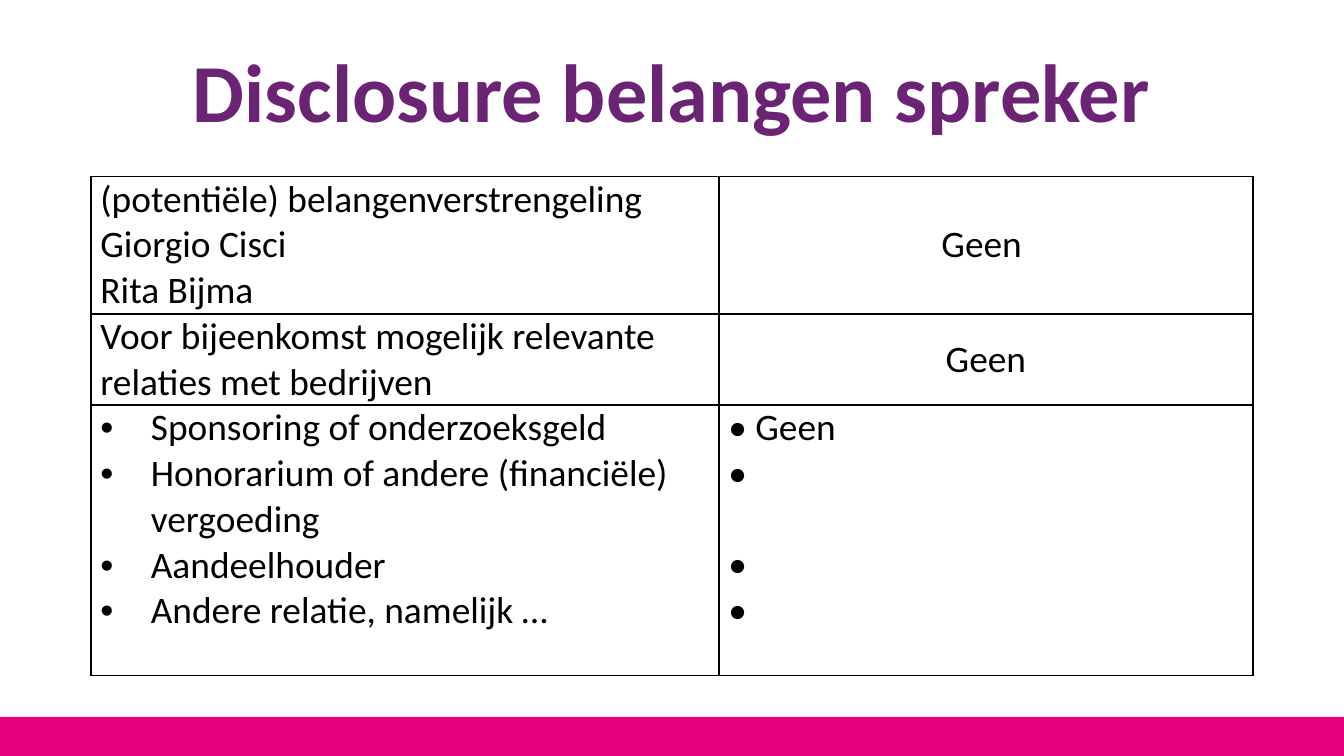
from dataclasses import dataclass

from pptx import Presentation
from pptx.dml.color import RGBColor
from pptx.enum import shapes, text
from pptx.oxml import parse_xml
from pptx.oxml.ns import nsdecls
from pptx import util as u


@dataclass(frozen=True)
class Theme:
    font: str = "Calibri"
    title_size: float = 44.1
    body_size: float = 20
    purple: str = "6B2473"
    pink: str = "E5007E"
    black: str = "000000"
    white: str = "FFFFFF"


class SlideBuilder:
    def __init__(self, deck, theme):
        self.theme = theme
        self.page = deck.slides.add_slide(deck.slide_layouts[6])
        fill = self.page.background.fill
        fill.solid()
        fill.fore_color.rgb = RGBColor.from_string(theme.white)

    def add_span(self, para, words, size, color, bold=False):
        span = para.add_run()
        span.text = words
        span.font.name = self.theme.font
        span.font.size = u.Pt(size)
        span.font.bold = bold
        span.font.color.rgb = RGBColor.from_string(color)

    def bar(self, left, top, width, height, color):
        shape = self.page.shapes.add_shape(
            shapes.MSO_SHAPE.RECTANGLE, u.Pt(left), u.Pt(top), u.Pt(width), u.Pt(height))
        shape.shadow.inherit = False
        shape.fill.solid()
        shape.fill.fore_color.rgb = RGBColor.from_string(color)
        shape.line.fill.background()

    def title(self, words, left, top, width, height):
        box = self.page.shapes.add_textbox(
            u.Pt(left), u.Pt(top), u.Pt(width), u.Pt(height))
        frame = box.text_frame
        frame.word_wrap = True
        frame.margin_top = u.Pt(5)
        para = frame.paragraphs[0]
        para.alignment = text.PP_ALIGN.CENTER
        self.add_span(para, words, self.theme.title_size, self.theme.purple, bold=True)

    def table(self, left, top, widths, heights):
        frame = self.page.shapes.add_table(
            len(heights), len(widths), u.Pt(left), u.Pt(top),
            u.Pt(sum(widths)), u.Pt(sum(heights)))
        table = frame.table
        table.first_row = table.horz_banding = False
        for column, width in zip(table.columns, widths):
            column.width = u.Pt(width)
        for row, height in zip(table.rows, heights):
            row.height = u.Pt(height)
        return table

    def border(self, cell):
        """Draw a 1 pt line on all four sides of a cell."""
        properties = cell._tc.get_or_add_tcPr()
        for side in "LRTB":
            properties.append(parse_xml(
                f'<a:ln{side} {nsdecls("a")} w="{u.Pt(1)}"><a:solidFill>'
                f'<a:srgbClr val="{self.theme.black}"/></a:solidFill></a:ln{side}>'))

    def bullet(self, para, indent):
        properties = para._p.get_or_add_pPr()
        properties.set("marL", str(u.Pt(indent)))
        properties.set("indent", str(-u.Pt(indent)))
        properties.append(parse_xml(f'<a:buFont {nsdecls("a")} typeface="Arial"/>'))
        properties.append(parse_xml(f'<a:buChar {nsdecls("a")} char="•"/>'))

    def cell(self, cell, lines, centred=False, middle=True, bullets=False, gaps=None):
        """Fill a cell; gaps maps a line number to the space before that line."""
        self.border(cell)
        cell.fill.background()
        cell.margin_left = cell.margin_right = u.Pt(5)
        cell.margin_top = cell.margin_bottom = u.Pt(0)
        anchors = text.MSO_ANCHOR
        cell.vertical_anchor = anchors.MIDDLE if middle else anchors.TOP
        frame = cell.text_frame
        for number, line in enumerate(lines):
            para = frame.add_paragraph() if number else frame.paragraphs[0]
            if bullets:
                self.bullet(para, 27)
            if centred:
                para.alignment = text.PP_ALIGN.CENTER
            if gaps and number in gaps:
                para.space_before = u.Pt(gaps[number])
            self.add_span(para, line, self.theme.body_size, self.theme.black)


def main():
    deck = Presentation()
    deck.slide_width, deck.slide_height = u.Pt(720), u.Pt(405)
    theme = Theme()
    builder = SlideBuilder(deck, theme)
    builder.bar(0, 384, 720, 21, theme.pink)

    table = builder.table(48.8, 94.6, widths=(336.4, 286), heights=(73.2, 49, 144.8))
    builder.cell(table.cell(0, 0), [
        "(potentiële) belangenverstrengeling", "Giorgio Cisci", "Rita Bijma"])
    builder.cell(table.cell(0, 1), ["Geen "], centred=True)
    builder.cell(table.cell(1, 0), [
        "Voor bijeenkomst mogelijk relevante relaties met bedrijven"])
    builder.cell(table.cell(1, 1), ["Geen"], centred=True)
    builder.cell(table.cell(2, 0), [
        "Sponsoring of onderzoeksgeld",
        "Honorarium of andere (financiële) vergoeding",
        "Aandeelhouder",
        "Andere relatie, namelijk …"], middle=False, bullets=True)
    # The gap keeps the answers level with the two-line item on the left.
    builder.cell(table.cell(2, 1), ["• Geen", "•", "•", "•"],
                 middle=False, gaps={2: 24.4})

    builder.title("Disclosure belangen spreker", 36, 16.6, 648, 67.7)
    deck.save("out.pptx")


if __name__ == "__main__":
    main()
